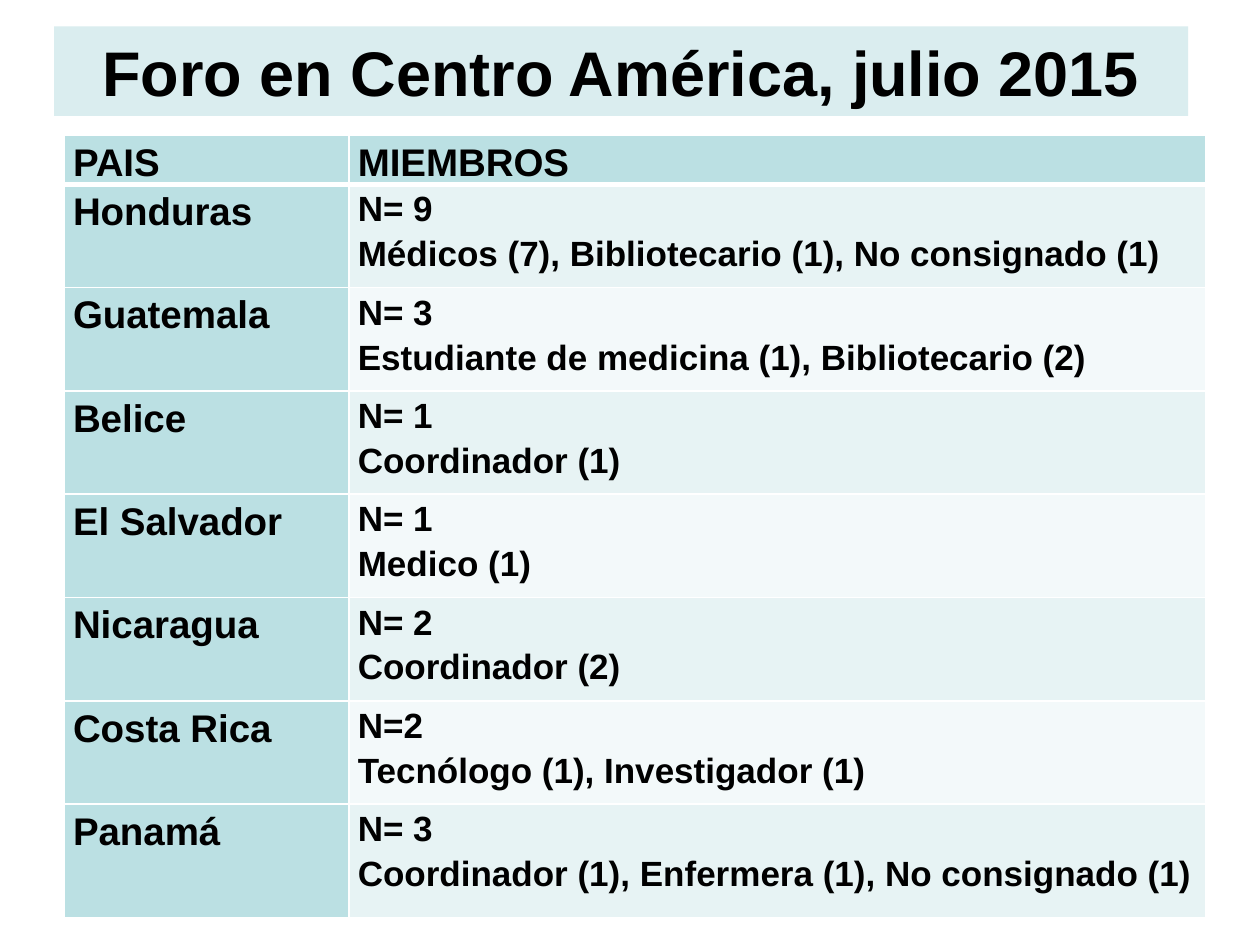
from lxml import etree
from pptx import Presentation
from pptx.dml.color import RGBColor
from pptx.enum.text import MSO_ANCHOR, MSO_AUTO_SIZE, PP_ALIGN
from pptx.oxml.ns import qn
from pptx.util import Inches, Pt

CENTER = PP_ALIGN.CENTER
MIDDLE = MSO_ANCHOR.MIDDLE
NO_AUTOFIT = MSO_AUTO_SIZE.NONE

MEMBERS = [
    ("Honduras", "N= 9", "Médicos (7), Bibliotecario (1), No consignado (1)"),
    ("Guatemala", "N= 3", "Estudiante de medicina (1), Bibliotecario (2)"),
    ("Belice", "N= 1", "Coordinador (1)"),
    ("El Salvador", "N= 1", "Medico (1)"),
    ("Nicaragua", "N= 2", "Coordinador (2)"),
    ("Costa Rica", "N=2", "Tecnólogo (1), Investigador (1)"),
    ("Panamá", "N= 3", "Coordinador (1), Enfermera (1), No consignado (1)"),
]


def color(hex_string):
    return RGBColor.from_string(hex_string)


class SlideBuilder:
    font = "Arial"
    ink = "000000"
    title_fill = "DAEDEF"
    label_fill = "BBE0E3"
    band_fills = ("E7F3F4", "F3F9FA")
    border = "FFFFFF"
    heading_size = 22
    detail_size = 20

    def __init__(self, presentation):
        self.width = presentation.slide_width
        self.height = presentation.slide_height
        self.slide = presentation.slides.add_slide(presentation.slide_layouts[5])

    def box(self, left, top, width, height):
        return (round(left * self.width), round(top * self.height),
                round(width * self.width), round(height * self.height))

    def format_runs(self, paragraph, size):
        for run in paragraph.runs:
            run.font.name = self.font
            run.font.size = Pt(size)
            run.font.bold = True
            run.font.color.rgb = color(self.ink)

    def title(self, text, *shares):
        shape = self.slide.shapes.title
        shape.left, shape.top, shape.width, shape.height = self.box(*shares)
        shape.fill.solid()
        shape.fill.fore_color.rgb = color(self.title_fill)
        text_frame = shape.text_frame
        text_frame.text = text
        text_frame.auto_size = NO_AUTOFIT
        text_frame.word_wrap = True
        text_frame.vertical_anchor = MIDDLE
        text_frame.paragraphs[0].alignment = CENTER
        self.format_runs(text_frame.paragraphs[0], 36)

    def cell_borders(self, cell, top, bottom):
        properties = cell._tc.get_or_add_tcPr()
        for side, points in (("L", 1), ("R", 1), ("T", top), ("B", bottom)):
            line = etree.SubElement(properties, qn(f"a:ln{side}"), w=str(Pt(points)))
            fill = etree.SubElement(line, qn("a:solidFill"))
            etree.SubElement(fill, qn("a:srgbClr"), val=self.border)

    def cell(self, cell, text, size, fill, top, bottom):
        self.cell_borders(cell, top, bottom)
        cell.fill.solid()
        cell.fill.fore_color.rgb = color(fill)
        cell.margin_left = cell.margin_right = Inches(0.07)
        cell.margin_top = cell.margin_bottom = 0
        cell.text_frame.text = text
        for paragraph in cell.text_frame.paragraphs:
            paragraph.line_spacing = 1.15
            self.format_runs(paragraph, size)

    def table(self, rows, column_shares, row_shares, *shares):
        frame = self.slide.shapes.add_table(
            len(rows), len(column_shares), *self.box(*shares))
        table = frame.table
        for column, share in zip(table.columns, column_shares):
            column.width = round(share * self.width)
        for row, share in zip(table.rows, row_shares):
            row.height = round(share * self.height)
        for row_index, texts in enumerate(rows):
            top = 3 if row_index == 1 else 1
            bottom = 3 if row_index == 0 else 1
            for column_index, text in enumerate(texts):
                is_label = row_index == 0 or column_index == 0
                size = self.heading_size if is_label else self.detail_size
                band = self.band_fills[(row_index - 1) % 2]
                fill = self.label_fill if is_label else band
                self.cell(table.cell(row_index, column_index),
                          text, size, fill, top, bottom)


def main():
    presentation = Presentation()
    presentation.slide_width = Inches(10)
    presentation.slide_height = Inches(7.5)
    builder = SlideBuilder(presentation)
    builder.title("Foro en Centro América, julio 2015",
                  0.43 / 10, 0.21 / 7.5, 9 / 10, 0.71 / 7.5)
    rows = [("PAIS", "MIEMBROS")]
    rows += [(country, f"{count}\n{roles}") for country, count, roles in MEMBERS]
    row_shares = [height / 7.5 for height in [0.39] + [0.82] * 6 + [0.9]]
    builder.table(rows, (0.226, 0.68), row_shares,
                  0.51 / 10, 1.07 / 7.5, 0.906, sum(row_shares))
    presentation.save("out.pptx")


if __name__ == "__main__":
    main()
